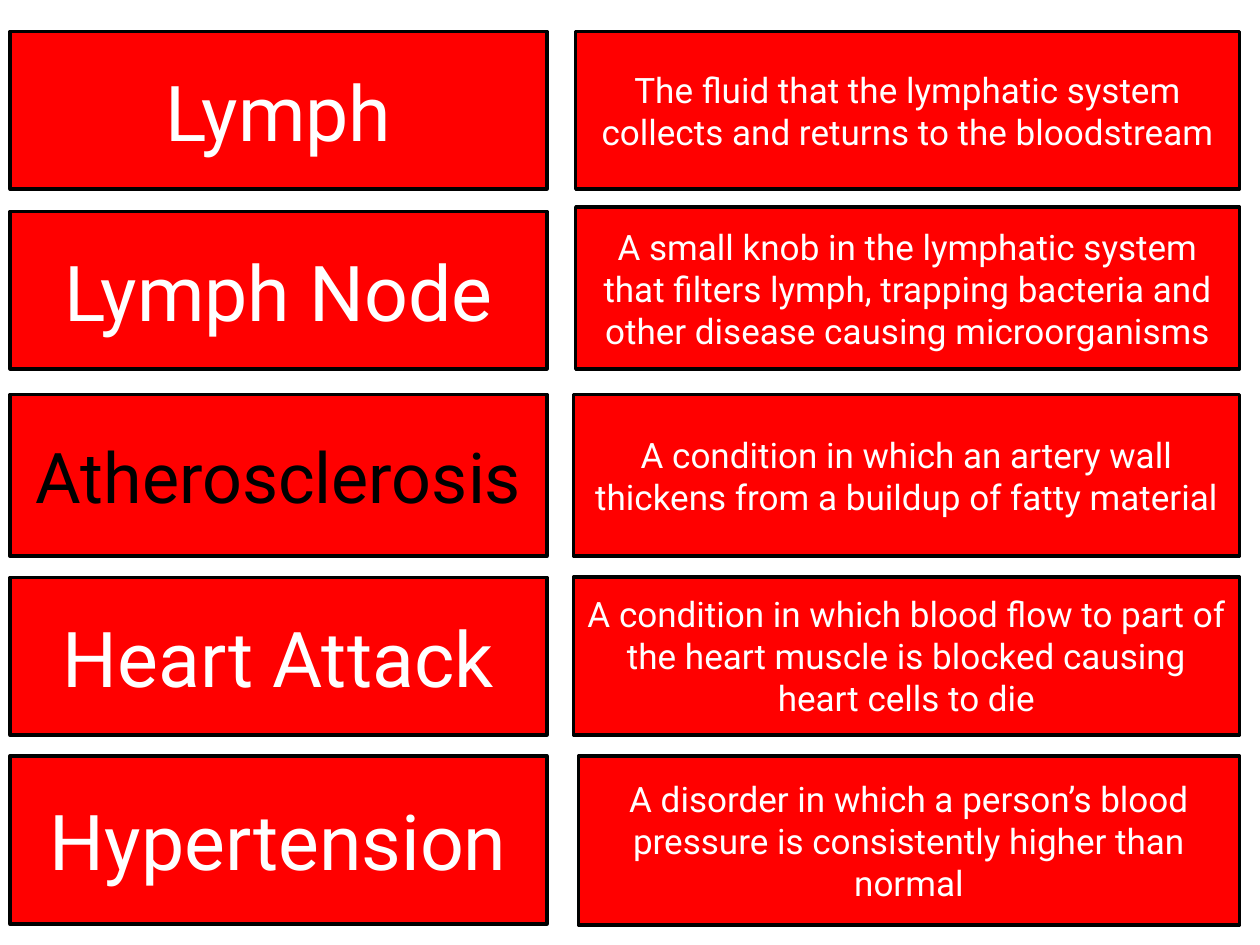
"""Build a slide of matching cards: health terms and their definitions."""
from pptx import Presentation
from pptx import util as u
from pptx.dml.color import RGBColor
from pptx.enum import shapes, text

RED = RGBColor(0xFF, 0, 0)
WHITE = RGBColor(0xFF, 0xFF, 0xFF)
BLACK = RGBColor(0, 0, 0)

LEFT, WIDE, EDGE = 5.8, 306.7, 708.3
TERM = {"size": u.Pt(44), "name": "Roboto"}
NOTE = {"size": u.Pt(20), "name": "Roboto"}
SMALL = {"size": u.Pt(40)}

# term, ink, format, (top, height), definition, (left, top, height)
CARDS = [
    ("Lymph", WHITE, {}, (18, 90),
     "The fluid that the lymphatic system collects and returns to the bloodstream",
     (329, 18, 90)),
    ("Lymph Node", WHITE, {}, (120.8, 90),
     "A small knob in the lymphatic system that filters lymph, trapping bacteria "
     "and other disease causing microorganisms",
     (329, 118.4, 92.4)),
    ("Atherosclerosis", BLACK, SMALL, (225.4, 92.4),
     "A condition in which an artery wall thickens from a buildup of fatty material",
     (327.8, 225.4, 92.4)),
    ("Heart Attack", WHITE, {}, (330, 90),
     "A condition in which blood flow to part of the heart muscle is blocked "
     "causing heart cells to die",
     (327.8, 329.6, 90.4)),
    ("Hypertension", WHITE, {}, (432, 96),
     "A disorder in which a person’s blood pressure is consistently higher than normal",
     (330.6, 432, 96.6)),
]


def card(slide, box, words, ink, form):
    shape = slide.shapes.add_shape(
        shapes.MSO_SHAPE.FLOWCHART_PROCESS, *(u.Pt(n) for n in box))
    shape.shadow.inherit = False
    shape.fill.solid()
    shape.fill.fore_color.rgb = RED
    shape.line.color.rgb = BLACK
    shape.line.width = u.Pt(2)
    frame = shape.text_frame
    frame.word_wrap = True
    frame.vertical_anchor = text.MSO_ANCHOR.MIDDLE
    para = frame.paragraphs[0]
    para.alignment = text.PP_ALIGN.CENTER
    run = para.add_run()
    run.text = words
    run.font.color.rgb = ink
    for key, value in form.items():
        setattr(run.font, key, value)


def main():
    deck = Presentation()
    deck.slide_width, deck.slide_height = u.Pt(720), u.Pt(540)
    slide = deck.slides.add_slide(deck.slide_layouts[6])
    for term, ink, form, (top, high), note, (left, start, tall) in CARDS:
        card(slide, (LEFT, top, WIDE, high), term, ink, {**TERM, **form})
        card(slide, (left, start, EDGE - left, tall), note, WHITE, NOTE)
    deck.save("out.pptx")


if __name__ == "__main__":
    main()
